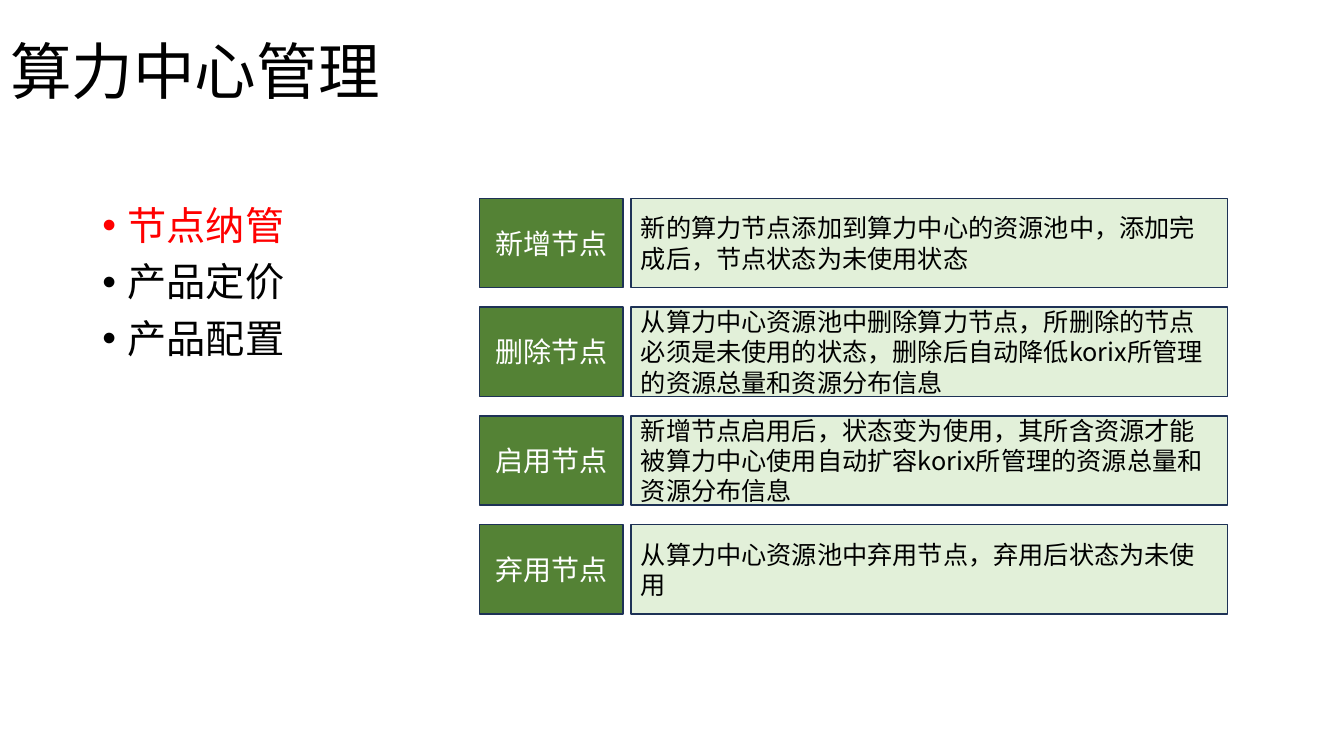
from lxml.etree import SubElement
from pptx import Presentation
from pptx.dml.color import RGBColor
from pptx.enum.shapes import MSO_SHAPE as Shape
from pptx.enum.text import MSO_ANCHOR as Anchor, MSO_AUTO_SIZE as AutoSize, PP_ALIGN as Align
from pptx.oxml.ns import qn
from pptx.util import Cm, Pt

# Content
TITLE = "算力中心管理"
TOPICS = ["节点纳管", "产品定价", "产品配置"]
CURRENT_TOPIC = "节点纳管"
OPERATIONS = [
    ("新增节点", "新的算力节点添加到算力中心的资源池中，添加完成后，节点状态为未使用状态"),
    ("删除节点", "从算力中心资源池中删除算力节点，所删除的节点必须是未使用的状态，"
                 "删除后自动降低korix所管理的资源总量和资源分布信息"),
    ("启用节点", "新增节点启用后，状态变为使用，其所含资源才能被算力中心使用"
                 "自动扩容korix所管理的资源总量和资源分布信息"),
    ("弃用节点", "从算力中心资源池中弃用节点，弃用后状态为未使用"),
]


class Theme:
    font = "Noto Sans CJK SC"
    text = "000000"
    highlight = "FF0000"
    label_text = "FFFFFF"
    label_fill = "548235"
    detail_fill = "E2F0D9"
    border = "1E3256"
    title_size = 44
    topic_size = 28
    label_size = 20
    detail_size = 18


# Layout in centimetres
TITLE_BOX = (0, 0.05, 29.21, 3.68)
TOPICS_BOX = (2.33, 5.08, 9, 12.09)
ROWS_TOP, ROW_PITCH, ROW_HEIGHT = 5, 2.74, 2.25
LABEL_LEFT, LABEL_WIDTH = 12.09, 3.61
DETAIL_LEFT, DETAIL_WIDTH = 15.9, 15.04
BULLET_INDENT = Cm(0.64)


def apply_format(target, values):
    for name, value in values.items():
        setattr(target, name, value)


def write(paragraph, text, size, color, **paragraph_format):
    apply_format(paragraph, paragraph_format)
    run = paragraph.add_run()
    run.text = text
    apply_format(run.font, {"size": Pt(size), "name": Theme.font})
    run.font.color.rgb = RGBColor.from_string(color)
    SubElement(run.font._element, qn("a:ea"), typeface=Theme.font)


def add_bullet(paragraph):
    properties = paragraph._p.get_or_add_pPr()
    properties.set("marL", str(BULLET_INDENT))
    properties.set("indent", str(-BULLET_INDENT))
    SubElement(properties, qn("a:buFont"), typeface="Arial")
    SubElement(properties, qn("a:buChar"), char="•")


def add_panel(slide, box, fill, text, size, color, alignment):
    shape = slide.shapes.add_shape(Shape.RECTANGLE, *map(Cm, box))
    shape.shadow.inherit = False
    shape.fill.solid()
    shape.fill.fore_color.rgb = RGBColor.from_string(fill)
    shape.line.color.rgb = RGBColor.from_string(Theme.border)
    shape.line.width = Pt(1)
    apply_format(shape.text_frame, {"word_wrap": True, "vertical_anchor": Anchor.MIDDLE})
    write(shape.text_frame.paragraphs[0], text, size, color, alignment=alignment)


def main():
    presentation = Presentation()
    apply_format(presentation, {"slide_width": Cm(33.87), "slide_height": Cm(19.05)})
    slide = presentation.slides.add_slide(presentation.slide_layouts.get_by_name("Title Only"))

    # Title
    title = slide.shapes.title
    apply_format(title, dict(zip(("left", "top", "width", "height"), map(Cm, TITLE_BOX))))
    apply_format(title.text_frame, {"word_wrap": True, "auto_size": AutoSize.NONE,
                                    "vertical_anchor": Anchor.MIDDLE})
    write(title.text_frame.paragraphs[0], TITLE, Theme.title_size, Theme.text,
          alignment=Align.LEFT, line_spacing=0.9)

    # Topic list
    frame = slide.shapes.add_textbox(*map(Cm, TOPICS_BOX)).text_frame
    frame.word_wrap = True
    for index, topic in enumerate(TOPICS):
        paragraph = frame.add_paragraph() if index else frame.paragraphs[0]
        color = Theme.highlight if topic == CURRENT_TOPIC else Theme.text
        write(paragraph, topic, Theme.topic_size, color, line_spacing=0.9, space_before=Pt(10))
        add_bullet(paragraph)

    # Operation rows
    for index, (label, detail) in enumerate(OPERATIONS):
        top = ROWS_TOP + index * ROW_PITCH
        add_panel(slide, (LABEL_LEFT, top, LABEL_WIDTH, ROW_HEIGHT), Theme.label_fill,
                  label, Theme.label_size, Theme.label_text, Align.CENTER)
        add_panel(slide, (DETAIL_LEFT, top, DETAIL_WIDTH, ROW_HEIGHT), Theme.detail_fill,
                  detail, Theme.detail_size, Theme.text, Align.LEFT)

    presentation.save("out.pptx")


if __name__ == "__main__":
    main()
